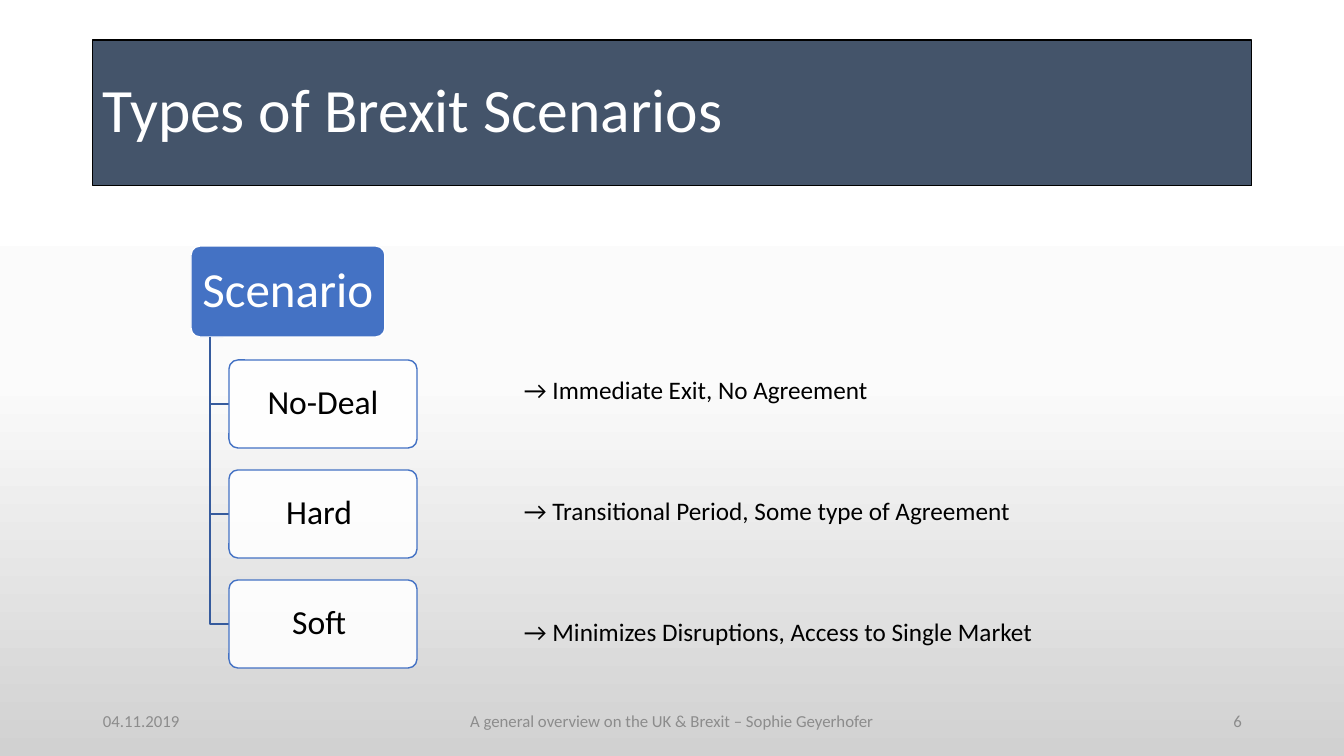
from copy import deepcopy

from lxml import etree
from pptx import Presentation
from pptx.dml.color import RGBColor
from pptx.enum.shapes import MSO_SHAPE
from pptx.enum.text import MSO_ANCHOR, PP_ALIGN
from pptx.oxml.ns import qn
from pptx.util import Pt

PX = 12192000 / 1344
LEFT, CENTER, RIGHT = PP_ALIGN.LEFT, PP_ALIGN.CENTER, PP_ALIGN.RIGHT
TOP, MIDDLE = MSO_ANCHOR.TOP, MSO_ANCHOR.MIDDLE
ROUNDED = MSO_SHAPE.ROUNDED_RECTANGLE

WHITE = RGBColor(0xFF, 0xFF, 0xFF)
PALE = RGBColor(0xFB, 0xFB, 0xFB)
SILVER = RGBColor(0xD1, 0xD1, 0xD1)
GRAY = RGBColor(0x8C, 0x8C, 0x8C)
BLACK = RGBColor(0, 0, 0)
SLATE = RGBColor(0x44, 0x54, 0x6A)
BLUE = RGBColor(0x44, 0x72, 0xC4)
DARK_BLUE = RGBColor(0x36, 0x5B, 0x9D)


def px(*lengths):
    return [round(length * PX) for length in lengths]


def write(box, text, size=18, color=BLACK, align=LEFT, anchor=MIDDLE,
          spacing=1.0, after=0, inset=(10, 5)):
    frame = box.text_frame
    frame.word_wrap = True
    frame.vertical_anchor = anchor
    frame.margin_left = frame.margin_right = px(inset[0])[0]
    frame.margin_top = frame.margin_bottom = px(inset[1])[0]
    frame.text = text
    for para in frame.paragraphs:
        para.alignment = align
        para.line_spacing = spacing
        para.space_after = Pt(after)
        for span in para.runs:
            span.font.name = "Calibri"
            span.font.size = Pt(size)
            span.font.color.rgb = color


deck = Presentation()
deck.slide_width, deck.slide_height = px(1344, 756)
page = deck.slides.add_slide(deck.slide_layouts[5])

backdrop = page.background.fill
backdrop.gradient()
backdrop.gradient_angle = 270
stop_list = page.element.find(".//" + qn("a:gsLst"))
stop_list.insert(1, deepcopy(stop_list[0]))
shades = [(0.15, WHITE), (0.5, PALE), (1, SILVER)]
for stop, (position, shade) in zip(backdrop.gradient_stops, shades):
    stop.position = position
    stop.color.rgb = shade

title = page.shapes.title
title.left, title.top, title.width, title.height = px(93, 40, 1159, 146)
title.fill.solid()
title.fill.fore_color.rgb = SLATE
title.line.color.rgb = BLACK
title.line.width = Pt(0.75)
write(title, "Types of Brexit Scenarios", size=44, color=WHITE, spacing=0.9)

footers = [
    (93, 302, "04.11.2019", LEFT),
    (445, 454, "A general overview on the UK & Brexit – Sophie Geyerhofer", CENTER),
    (950, 302, "6", RIGHT),
]
for left, width, text, align in footers:
    footer = page.shapes.add_textbox(*px(left, 701, width, 40))
    write(footer, text, size=12, color=GRAY, align=align)

root = page.shapes.add_shape(ROUNDED, *px(191, 246, 194, 91))
root.shadow.inherit = False
root.adjustments[0] = 0.1
root.fill.solid()
root.fill.fore_color.rgb = BLUE
root.line.color.rgb = WHITE
root.line.width = Pt(1)
write(root, "Scenario", size=35, color=WHITE, align=CENTER, spacing=0.9,
      inset=(4, 5))

for row, scenario in enumerate(["No-Deal", "Hard ", "Soft "]):
    top = 360 + 110 * row
    middle = top + 44
    builder = page.shapes.build_freeform(210, 337, scale=PX)
    builder.add_line_segments([(210, middle), (229, middle)], close=False)
    branch = builder.convert_to_shape()
    branch.shadow.inherit = False
    branch.fill.background()
    branch.line.color.rgb = DARK_BLUE
    branch.line.width = Pt(1)

    node = page.shapes.add_shape(ROUNDED, *px(229, top, 188, 88))
    node.shadow.inherit = False
    node.adjustments[0] = 0.1
    node.fill.solid()
    node.fill.fore_color.rgb = WHITE
    tint = node.element.spPr.find(qn("a:solidFill") + "/" + qn("a:srgbClr"))
    etree.SubElement(tint, qn("a:alpha"), val="90000")
    node.line.color.rgb = BLUE
    node.line.width = Pt(1)
    write(node, scenario, size=24, align=CENTER, spacing=0.9, inset=(5, 3))

meanings = [
    "→ Immediate Exit, No Agreement",
    "→ Transitional Period, Some type of Agreement",
    "→ Minimizes Disruptions, Access to Single Market",
]
outcomes = page.shapes.add_textbox(*px(514, 369, 550, 315))
write(outcomes, "\n".join(meanings), anchor=TOP, after=65)

deck.save("out.pptx")
